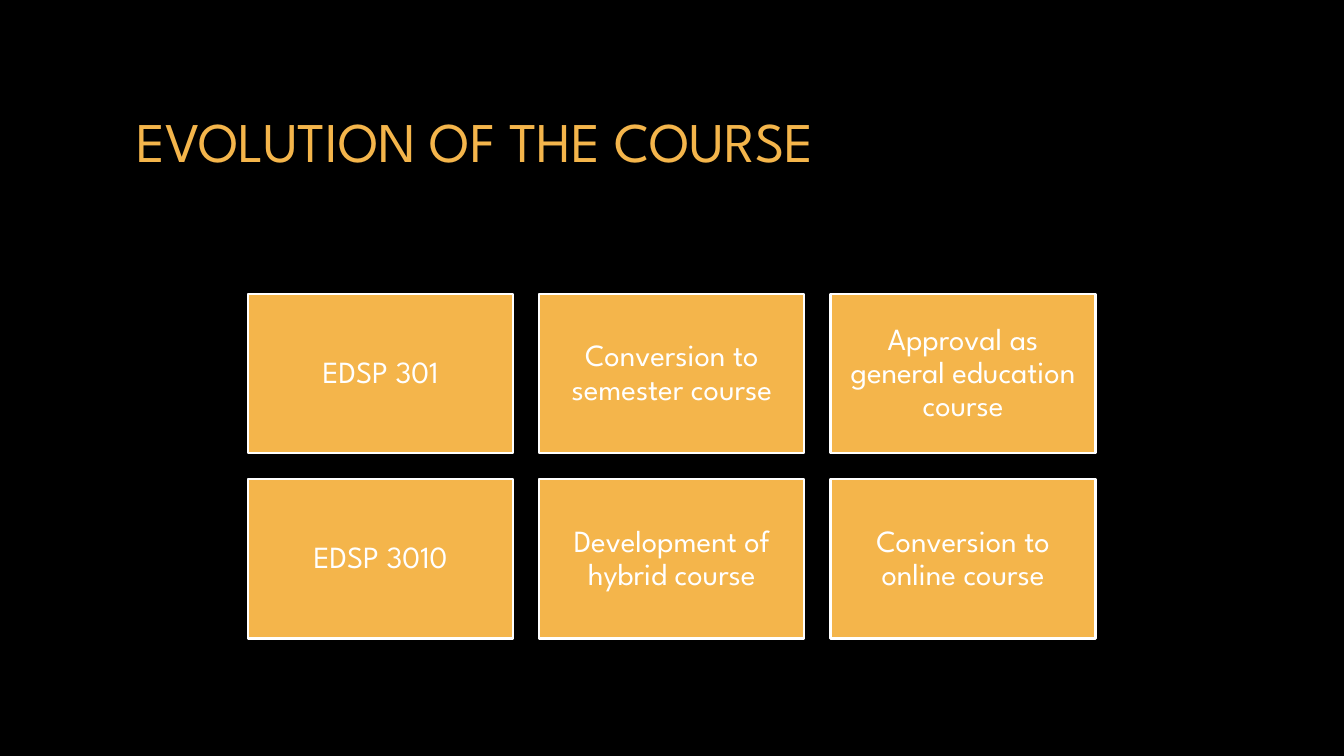
from dataclasses import dataclass

from lxml import etree
from pptx import Presentation
from pptx import util as u
from pptx.dml.color import RGBColor
from pptx.enum import shapes, text
from pptx.oxml import ns


@dataclass(frozen=True)
class Theme:
    background: RGBColor = RGBColor.from_string("000000")
    accent: RGBColor = RGBColor.from_string("F4B54B")
    light: RGBColor = RGBColor.from_string("FFFFFF")
    font: str = "League Spartan"
    title_size: int = 40
    step_size: int = 22
    outline: float = 1.5


class SlideBuilder:
    def __init__(self, slide, theme):
        self.slide = slide
        self.theme = theme
        backdrop = slide.background.fill
        backdrop.solid()
        backdrop.fore_color.rgb = theme.background

    def set_wording(self, frame, wording, size, color):
        frame.word_wrap = True
        frame.vertical_anchor = text.MSO_ANCHOR.MIDDLE
        paragraph = frame.paragraphs[0]
        paragraph.add_run().text = wording
        paragraph.font.name = self.theme.font
        paragraph.font.size = u.Pt(size)
        paragraph.font.color.rgb = color
        return paragraph

    def title(self, wording, left, top, width, height):
        heading = self.slide.shapes.add_textbox(
            u.Cm(left), u.Cm(top), u.Cm(width), u.Cm(height))
        paragraph = self.set_wording(heading.text_frame, wording,
                                     self.theme.title_size, self.theme.accent)
        self.add_text_shadow(paragraph.runs[0])

    def add_text_shadow(self, run):
        effects = etree.SubElement(run.font._element, ns.qn("a:effectLst"))
        shadow = etree.SubElement(effects, ns.qn("a:outerShdw"), blurRad="38100",
                                  dist="38100", dir="2700000", algn="tl")
        etree.SubElement(shadow, ns.qn("a:srgbClr"), val="000000")

    def step(self, wording, left, top, width, height):
        box = self.slide.shapes.add_shape(
            shapes.MSO_SHAPE.RECTANGLE,
            u.Cm(left), u.Cm(top), u.Cm(width), u.Cm(height))
        box.shadow.inherit = False
        box.fill.solid()
        box.fill.fore_color.rgb = self.theme.accent
        box.line.color.rgb = self.theme.light
        box.line.width = u.Pt(self.theme.outline)
        frame = box.text_frame
        frame.margin_left = frame.margin_right = u.Cm(0.23)
        frame.margin_top = frame.margin_bottom = u.Cm(0.23)
        paragraph = self.set_wording(frame, wording,
                                     self.theme.step_size, self.theme.light)
        paragraph.alignment = text.PP_ALIGN.CENTER
        paragraph.line_spacing = 0.9


STEPS = [
    ["EDSP 301", "Conversion to semester course", "Approval as general education course"],
    ["EDSP 3010", "Development of hybrid course", "Conversion to online course"],
]
GRID_LEFT, GRID_TOP = 6.25, 7.41
STEP_WIDTH, STEP_HEIGHT, GAP = 6.68, 4.01, 0.66


def main():
    deck = Presentation()
    deck.slide_width, deck.slide_height = u.Cm(33.87), u.Cm(19.05)
    builder = SlideBuilder(deck.slides.add_slide(deck.slide_layouts[6]), Theme())
    builder.title("EVOLUTION OF THE COURSE", 3.18, 0.89, 27.51, 5.28)
    for row, stages in enumerate(STEPS):
        for column, stage in enumerate(stages):
            builder.step(stage,
                         GRID_LEFT + column * (STEP_WIDTH + GAP),
                         GRID_TOP + row * (STEP_HEIGHT + GAP),
                         STEP_WIDTH, STEP_HEIGHT)
    deck.save("out.pptx")


if __name__ == "__main__":
    main()
